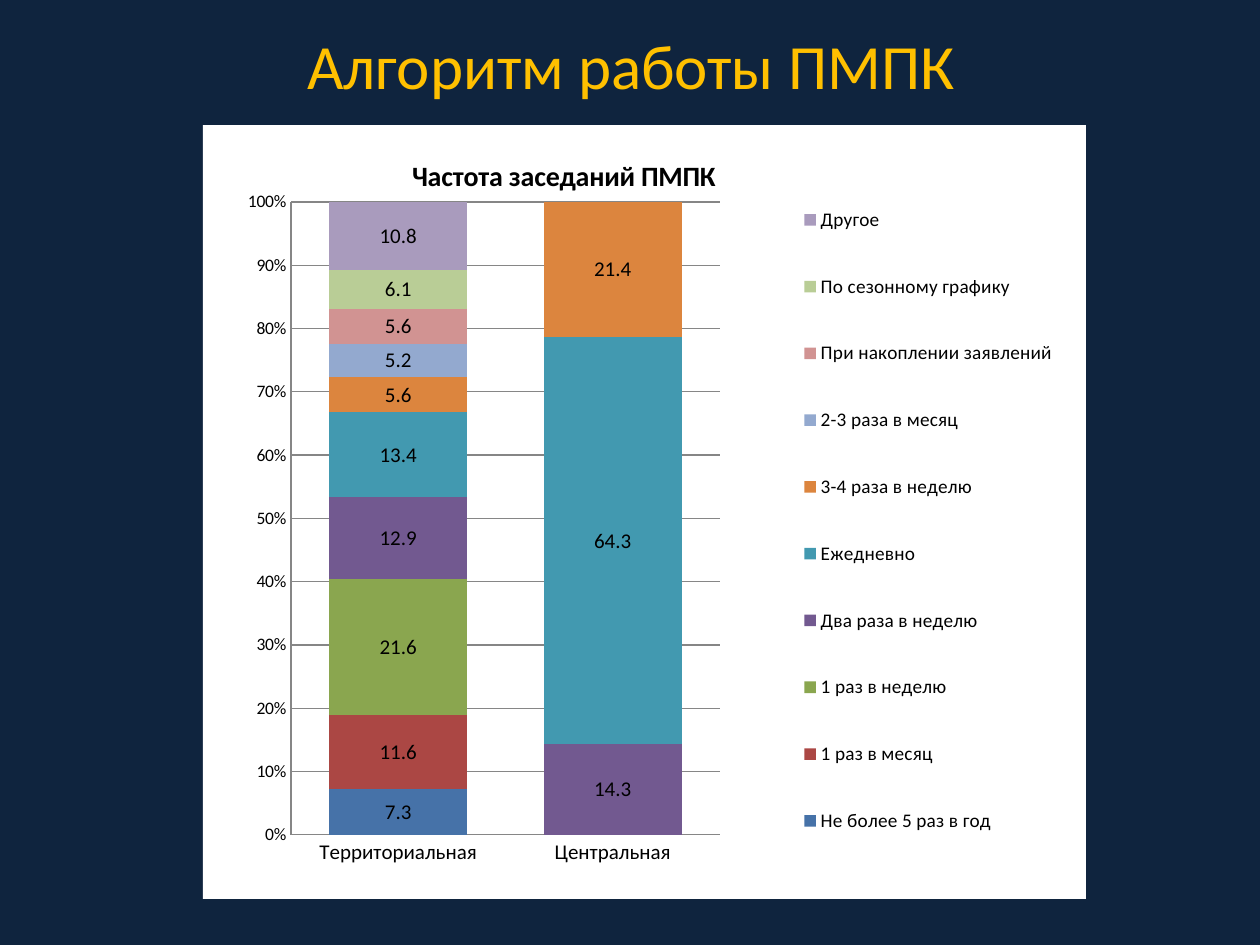
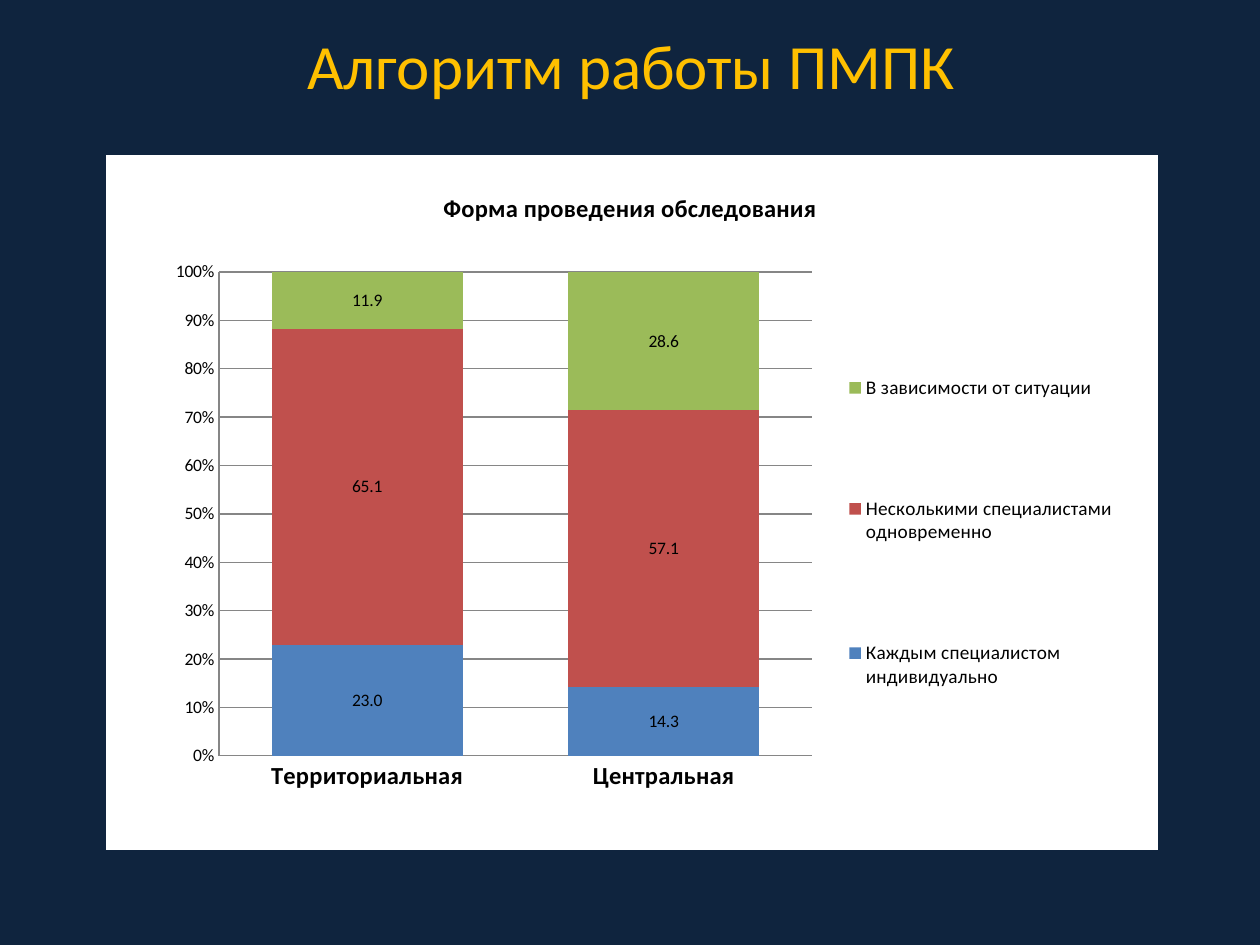
from dataclasses import dataclass

from lxml import etree
from pptx import Presentation
from pptx import util as u
from pptx.chart.data import CategoryChartData
from pptx.dml.color import RGBColor
from pptx.enum import chart as ch
from pptx.enum import text
from pptx.oxml import parse_xml
from pptx.oxml.ns import nsdecls, qn


@dataclass(frozen=True)
class Theme:
    """Colours, font and type sizes shared by the slides."""
    font: str = "Calibri"
    background: str = "0F243E"
    heading: str = "FFC000"
    panel: str = "FFFFFF"
    ink: str = "000000"
    grid: str = "868686"
    heading_size: int = 36
    body_size: int = 10
    legend_size: int = 11
    form_colours: tuple = ("4F81BD", "C0504D", "9BBB59")
    frequency_colours: tuple = (
        "4672A8", "AB4744", "8AA64F", "725990", "4299B0",
        "DC853E", "93A9CF", "D19392", "B9CD96", "A99BBD")


@dataclass(frozen=True)
class Survey:
    """One survey question with its answers and chart arrangement."""
    question: str
    answers: dict
    colours: tuple
    box: tuple
    plot_box: tuple
    legend_box: tuple
    question_corner: tuple
    question_size: int
    category_size: int
    category_bold: bool
    value_size: int


THEME = Theme()
EMU_PER_PX = u.Inches(1) / 126
HEADING = "Алгоритм работы ПМПК"
HEADING_BOX = (64, 26, 1134, 77)
COMMISSIONS = ("Территориальная", "Центральная")

FREQUENCY = Survey(
    question="Частота заседаний ПМПК",
    answers={
        "Не более 5 раз в год": (7.3, 0),
        "1 раз в месяц": (11.6, 0),
        "1 раз в неделю": (21.6, 0),
        "Два раза в неделю": (12.9, 14.3),
        "Ежедневно": (13.4, 64.3),
        "3-4 раза в неделю": (5.6, 21.4),
        "2-3 раза в месяц": (5.2, 0),
        "При накоплении заявлений": (5.6, 0),
        "По сезонному графику": (6.1, 0),
        "Другое": (10.8, 0),
    },
    colours=THEME.frequency_colours,
    box=(203, 125, 883, 774),
    plot_box=(88, 77, 429, 633),
    legend_box=(588, 40, 275, 711),
    question_corner=(204, 27),
    question_size=16, category_size=12, category_bold=False, value_size=12)

EXAMINATION = Survey(
    question="Форма проведения обследования",
    answers={
        "Каждым специалистом индивидуально": (23, 14.3),
        "Несколькими специалистами одновременно": (65.1, 57.1),
        "В зависимости от ситуации": (11.9, 28.6),
    },
    colours=THEME.form_colours,
    box=(106, 155, 1052, 695),
    plot_box=(113, 117, 593, 484),
    legend_box=(730, 124, 290, 507),
    question_corner=(333, 31),
    question_size=14, category_size=14, category_bold=True, value_size=10)


def px(length):
    """Turn pixels into EMU."""
    return u.Emu(round(length * EMU_PER_PX))


def rgb(colour):
    """Turn a hex string into a colour."""
    return RGBColor.from_string(colour)


def style_font(font, size, colour=THEME.ink, bold=False):
    """Apply the shared typeface with a size, colour and weight."""
    font.name, font.size, font.bold = THEME.font, u.Pt(size), bold
    font.color.rgb = rgb(colour)


def place(parent, index, box, chart_box, inner=False):
    """Give a chart part a manual layout inside its chart."""
    for previous in parent.findall(qn("c:layout")):
        parent.remove(previous)
    layout = parse_xml(f"<c:layout {nsdecls('c')}/>")
    manual = etree.SubElement(layout, qn("c:manualLayout"))
    settings = [("layoutTarget", "inner")] if inner else []
    settings += [("xMode", "edge"), ("yMode", "edge")]
    sides = (chart_box[2], chart_box[3]) * 2
    settings += [(key, f"{length / side:.4f}")
                 for key, length, side in zip("xywh", box, sides)]
    for key, setting in settings:
        etree.SubElement(manual, qn(f"c:{key}"), val=setting)
    parent.insert(index, layout)


def add_heading(slide):
    """Write the shared heading in the title placeholder."""
    heading = slide.shapes.title
    heading.left, heading.top, heading.width, heading.height = map(px, HEADING_BOX)
    frame = heading.text_frame
    frame.text = HEADING
    frame.vertical_anchor = text.MSO_ANCHOR.MIDDLE
    paragraph = frame.paragraphs[0]
    paragraph.alignment = text.PP_ALIGN.CENTER
    style_font(paragraph.runs[0].font, THEME.heading_size, THEME.heading)


def fill_panel(chart):
    """Put a plain borderless panel behind the chart."""
    panel = parse_xml(
        f"<c:spPr {nsdecls('c', 'a')}><a:solidFill><a:srgbClr val='{THEME.panel}'/>"
        "</a:solidFill><a:ln><a:noFill/></a:ln></c:spPr>")
    chart._chartSpace.find(qn("c:chart")).addnext(panel)


def style_answer(answer, colour, value_size):
    """Colour one answer and label its non-zero shares."""
    answer.format.fill.solid()
    answer.format.fill.fore_color.rgb = rgb(colour)
    labels = answer.data_labels
    labels.show_value = True
    labels.number_format, labels.number_format_is_linked = "0.0", False
    style_font(labels.font, value_size)
    hidden = [i for i, share in enumerate(answer.values) if not share]
    for position, index in enumerate(hidden):
        label = parse_xml(f"<c:dLbl {nsdecls('c')}><c:idx val='{index}'/>"
                          "<c:delete val='1'/></c:dLbl>")
        labels._element.insert(position, label)


def style_axes(chart, survey):
    """Format the commission axis and the percentage axis."""
    commissions, shares = chart.category_axis, chart.value_axis
    for axis in (commissions, shares):
        axis.major_tick_mark = axis.minor_tick_mark = ch.XL_TICK_MARK.NONE
        axis.format.line.color.rgb = rgb(THEME.grid)
    style_font(commissions.tick_labels.font, survey.category_size,
               bold=survey.category_bold)
    style_font(shares.tick_labels.font, THEME.body_size)
    shares.tick_labels.number_format = "0%"
    shares.tick_labels.number_format_is_linked = False
    shares.major_gridlines.format.line.color.rgb = rgb(THEME.grid)


def add_survey_chart(slide, survey):
    """Draw one survey as a full-height stacked column chart."""
    data = CategoryChartData(number_format="0.0")
    data.categories = COMMISSIONS
    for name, shares in survey.answers.items():
        data.add_series(name, shares)
    chart = slide.shapes.add_chart(
        ch.XL_CHART_TYPE.COLUMN_STACKED_100, *map(px, survey.box), data).chart
    style_font(chart.font, THEME.body_size)
    fill_panel(chart)

    chart.has_title = True
    question = chart.chart_title
    question.text_frame.text = survey.question
    style_font(question.text_frame.paragraphs[0].runs[0].font,
               survey.question_size, bold=True)
    place(question._element, 1, survey.question_corner, survey.box)

    chart.has_legend = True
    legend = chart.legend
    legend.position = ch.XL_LEGEND_POSITION.RIGHT
    legend.include_in_layout = False
    style_font(legend.font, THEME.legend_size)
    place(legend._element, 1, survey.legend_box, survey.box)

    columns = chart.plots[0]
    columns.gap_width, columns.overlap = 55, 100
    columns.vary_by_categories = False
    for answer, colour in zip(columns.series, survey.colours):
        style_answer(answer, colour, survey.value_size)
    style_axes(chart, survey)
    plot_area = chart._chartSpace.find(".//" + qn("c:plotArea"))
    place(plot_area, 0, survey.plot_box, survey.box, inner=True)


def main():
    """Build both survey slides and save them."""
    deck = Presentation()
    deck.slide_width, deck.slide_height = px(1260), px(945)
    backdrop = deck.slide_master.background.fill
    backdrop.solid()
    backdrop.fore_color.rgb = rgb(THEME.background)
    for survey in (FREQUENCY, EXAMINATION):
        slide = deck.slides.add_slide(deck.slide_layouts[5])
        add_heading(slide)
        add_survey_chart(slide, survey)
    deck.save("out.pptx")


if __name__ == "__main__":
    main()
